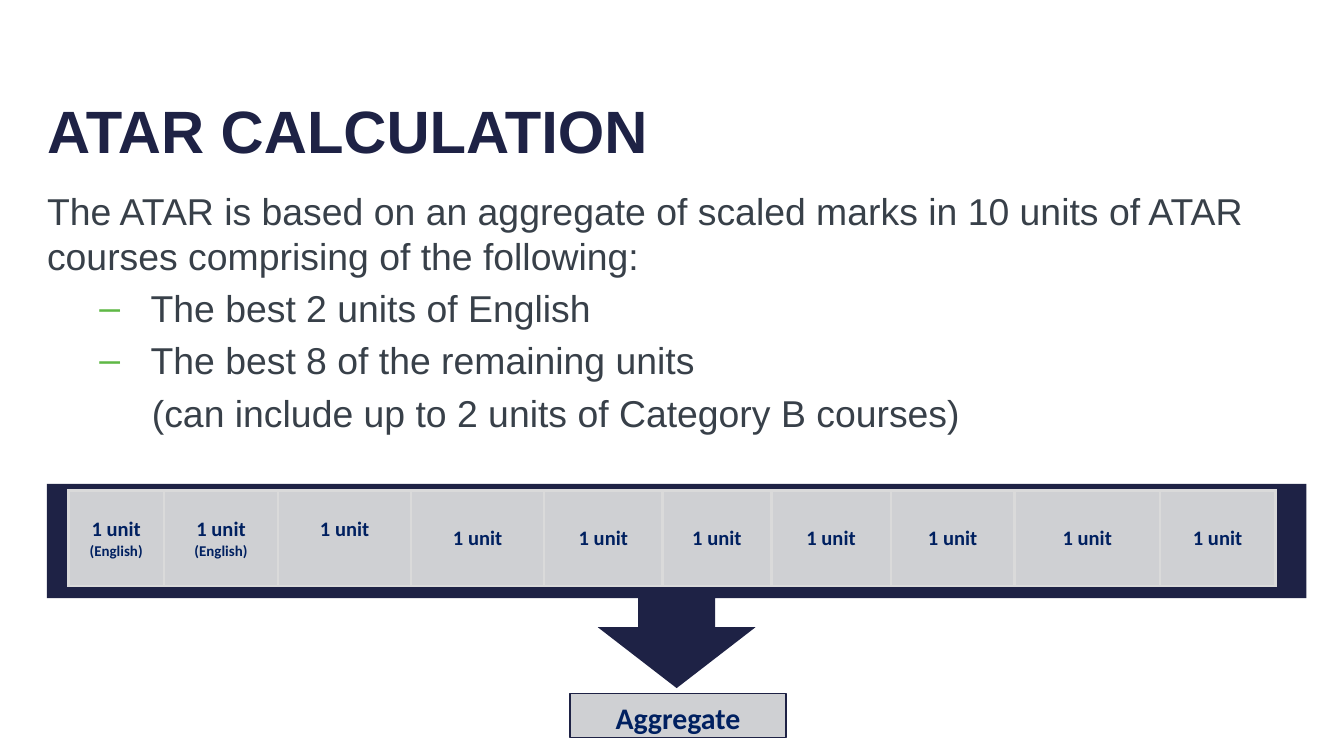
from lxml import etree
from pptx import Presentation
from pptx.dml.color import RGBColor
from pptx.enum.shapes import MSO_SHAPE as Shape
from pptx.enum.text import MSO_ANCHOR as Anchor, MSO_AUTO_SIZE as AutoSize, PP_ALIGN as Align
from pptx.oxml.ns import qn
from pptx.util import Inches, Pt

COLORS = {"navy": "1E2245", "text": "384049", "green": "5FB846",
          "grey": "CFD0D3", "border": "DADADA", "label": "002060"}


def color(name):
    return RGBColor.from_string(COLORS[name])


def add_run(paragraph, text, size, font, color_name, bold=False):
    run = paragraph.add_run()
    run.text = text
    run.font.size = Pt(size)
    run.font.name = font
    run.font.bold = bold
    run.font.color.rgb = color(color_name)


# Widescreen slide, 16:9
presentation = Presentation()
presentation.slide_width = Inches(10)
presentation.slide_height = Inches(10 * 9 / 16)
slide = presentation.slides.add_slide(presentation.slide_layouts[5])

# Title and body text
title = slide.shapes.title
title.left, title.top = Inches(0.35), Inches(0.29)
title.width, title.height = Inches(9.29), Inches(0.94)
body = slide.shapes.add_textbox(Inches(0.35), Inches(1.4), Inches(9.29), Inches(3.54))
for shape, anchor in ((title, Anchor.BOTTOM), (body, Anchor.TOP)):
    frame = shape.text_frame
    frame.margin_left = frame.margin_right = frame.margin_top = frame.margin_bottom = 0
    frame.word_wrap = True
    frame.auto_size = AutoSize.NONE
    frame.vertical_anchor = anchor
heading = title.text_frame.paragraphs[0]
heading.alignment = Align.LEFT
add_run(heading, "ATAR CALCULATION", 32, "Arial", "navy", True)

# Text, left margin, whether it has a dash
body_lines = [
    ("The ATAR is based on an aggregate of scaled marks in 10 units of ATAR "
     "courses comprising of the following:", 0, False),
    ("The best 2 units of English", 0.77, True),
    ("The best 8 of the remaining units", 0.77, True),
    ("(can include up to 2 units of Category B courses)", 0.78, False),
]
for index, (text, margin, has_dash) in enumerate(body_lines):
    frame = body.text_frame
    paragraph = frame.add_paragraph() if index else frame.paragraphs[0]
    properties = paragraph._p.get_or_add_pPr()
    properties.set("marL", str(Inches(margin)))
    if has_dash:
        properties.set("indent", str(Inches(-0.38)))
        bullet_color = etree.SubElement(properties, qn("a:buClr"))
        etree.SubElement(bullet_color, qn("a:srgbClr"), val=COLORS["green"])
        etree.SubElement(properties, qn("a:buFont"), typeface="Arial")
        etree.SubElement(properties, qn("a:buChar"), char="‒")
    if index:
        paragraph.space_before = Pt(4)
    add_run(paragraph, text, 20, "Arial", "text")

# Callout arrow and its result box
callout = slide.shapes.add_shape(Shape.DOWN_ARROW_CALLOUT, Inches(0.35), Inches(3.6),
                                 Inches(9.37), Inches(1.52))
for index, value in enumerate((0.376, 0.386, 0.298, 0.559)):
    callout.adjustments[index] = value
callout.line.fill.background()
aggregate = slide.shapes.add_shape(Shape.RECTANGLE, Inches(4.24), Inches(5.16),
                                   Inches(1.61), Inches(0.33))
aggregate.line.color.rgb = color("navy")
aggregate.line.width = Pt(0.75)
for shape, fill in ((callout, "navy"), (aggregate, "grey")):
    shape.shadow.inherit = False
    shape.fill.solid()
    shape.fill.fore_color.rgb = color(fill)
aggregate.text_frame.vertical_anchor = Anchor.TOP
paragraph = aggregate.text_frame.paragraphs[0]
paragraph.alignment = Align.CENTER
add_run(paragraph, "Aggregate", 16, "Calibri", "label", True)

# Unit tables: left edge, column widths, number of English units
unit_tables = [
    (0.51, (0.71, 0.85, 0.99, 0.99, 0.88, 0.81, 0.89, 0.92), 2),
    (7.55, (1.08, 0.86), 0),
]
for left, widths, english_count in unit_tables:
    table = slide.shapes.add_table(1, len(widths), Inches(left), Inches(3.65),
                                   Inches(sum(widths)), Inches(0.71)).table
    table.first_row = table.horz_banding = False
    for index, width in enumerate(widths):
        table.columns[index].width = Inches(width)
        cell = table.cell(0, index)
        cell.vertical_anchor = Anchor.MIDDLE
        paragraph = cell.text_frame.paragraphs[0]
        paragraph.alignment = Align.CENTER
        is_english = index < english_count
        add_run(paragraph, "1 unit " if is_english else "1 unit", 11, "Calibri", "label", True)
        if is_english:
            add_run(paragraph, "(English)", 8, "Calibri", "label", True)
        elif english_count and index == english_count:
            # First unit after English lines up with the English labels
            cell.margin_bottom = Inches(0.18)
        properties = cell._tc.get_or_add_tcPr()
        for side in ("a:lnL", "a:lnR", "a:lnT", "a:lnB"):
            border = etree.SubElement(properties, qn(side), w=str(Pt(1.5)))
            border_fill = etree.SubElement(border, qn("a:solidFill"))
            etree.SubElement(border_fill, qn("a:srgbClr"), val=COLORS["border"])
        cell.fill.solid()
        cell.fill.fore_color.rgb = color("grey")

presentation.save("out.pptx")
